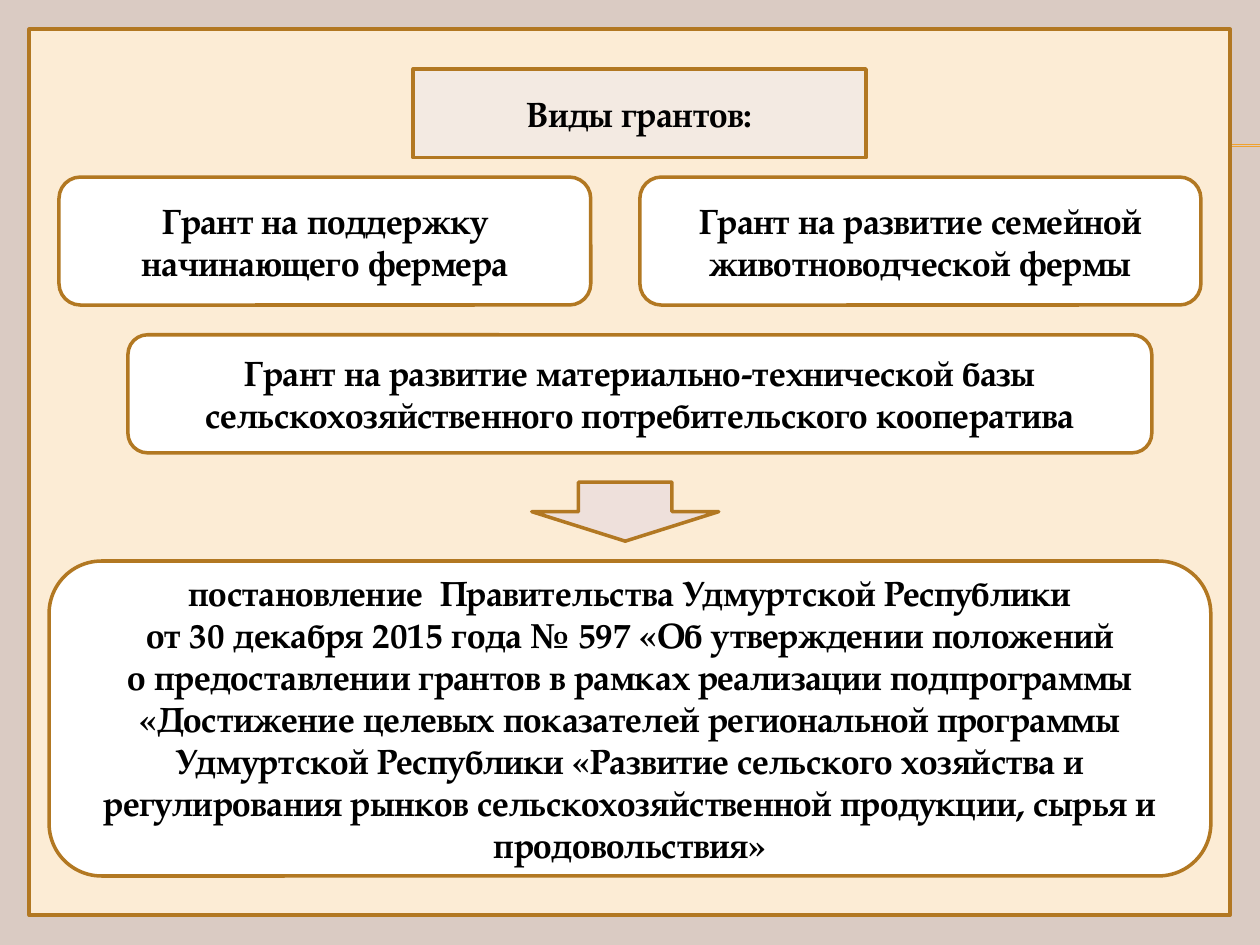
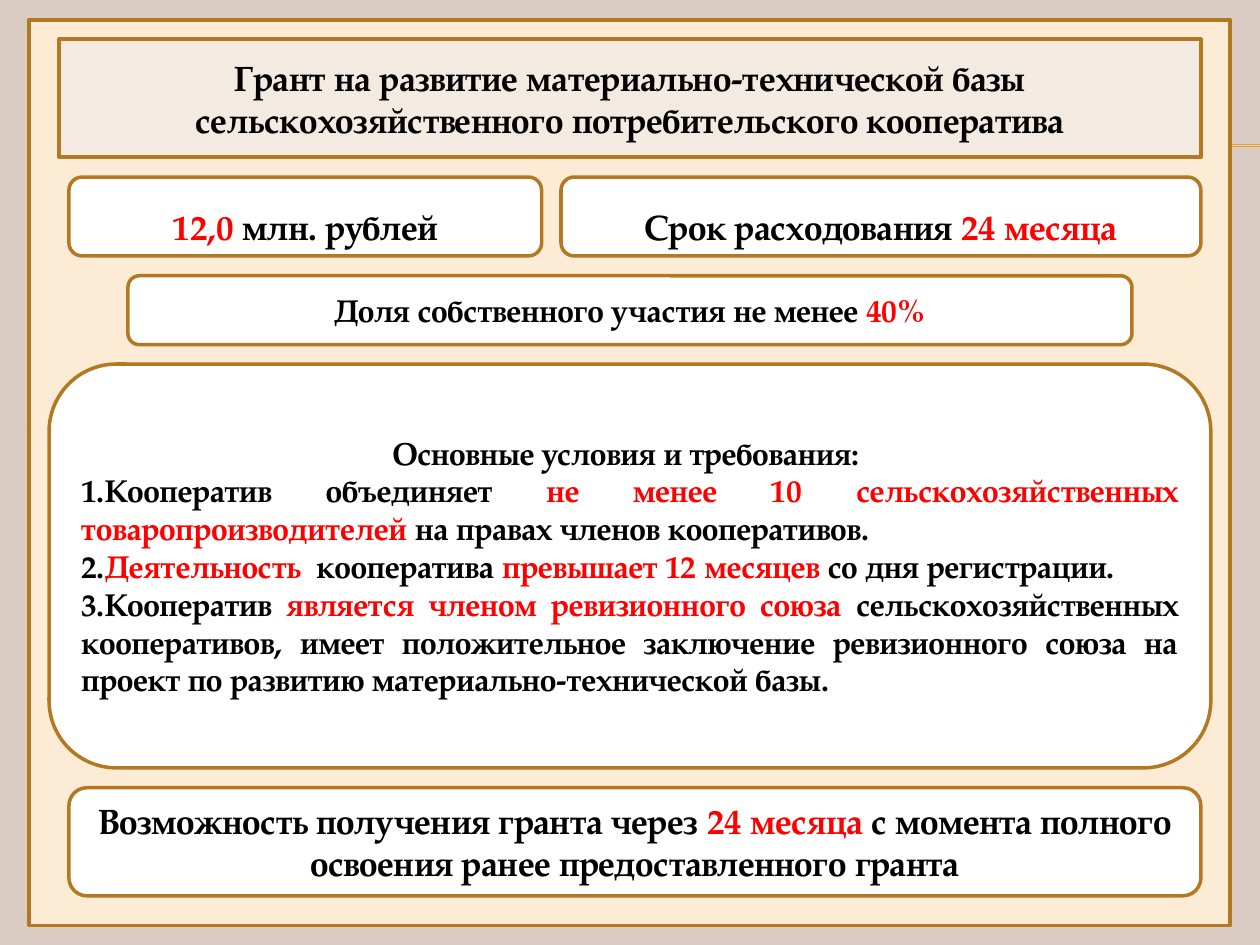
"""Build two slides on farm grants."""
from lxml.etree import SubElement
from pptx import Presentation
from pptx.dml.color import RGBColor as RGB
from pptx.enum.shapes import MSO_CONNECTOR as LINK, MSO_SHAPE as SHAPE
from pptx.enum.text import MSO_ANCHOR as ANCHOR, MSO_AUTO_SIZE as FIT, PP_ALIGN as ALIGN
from pptx.oxml.ns import qn
from pptx.util import Cm, Pt

HUES = {
    "back": "DACBC3", "panel": "FCECD5", "head": "F3EAE2", "card": "FFFFFF",
    "arrow": "EEE0DB", "edge": "B27822", "rule": "F0A22E",
    "ink": "000000", "red": "FF0000",
}
FONT = "TeX Gyre Pagella"
WIDE, HIGH = 25.4, 19.05
COOP = ("Грант на развитие материально-технической базы "
        "сельскохозяйственного потребительского кооператива")


def hue(name):
    """Return a named colour."""
    return RGB.from_string(HUES[name])


class Deck:
    """Hold the style and the current slide."""

    def __init__(self):
        """Start an empty deck with a plain background."""
        self.prs = Presentation()
        self.prs.slide_width, self.prs.slide_height = Cm(WIDE), Cm(HIGH)
        fill = self.prs.slide_master.background.fill
        fill.solid()
        fill.fore_color.rgb = hue("back")

    def page(self, top, high, title, box):
        """Add a slide with its rules, panel and title."""
        self.slide = self.prs.slides.add_slide(self.prs.slide_layouts[5])
        for y in (2.92, 2.95):
            self.rule(y)
        self.shape(SHAPE.RECTANGLE, (0.59, top, 24.21, high), "panel")
        self.title(title, box)

    def rule(self, y):
        """Draw a thin line to the right edge."""
        line = self.slide.shapes.add_connector(
            LINK.STRAIGHT, Cm(1.42), Cm(y), Cm(WIDE), Cm(y))
        line.line.color.rgb = hue("rule")
        line.line.width = Pt(0.75)
        SubElement(line.element.spPr, qn("a:effectLst"))

    def paint(self, shape, fill):
        """Fill and outline a shape."""
        shape.fill.solid()
        shape.fill.fore_color.rgb = hue(fill)
        shape.line.color.rgb = hue("edge")
        shape.line.width = Pt(2)

    def shape(self, kind, box, fill):
        """Add a preset shape in the deck style."""
        shape = self.slide.shapes.add_shape(kind, *map(Cm, box))
        shape.shadow.inherit = False
        self.paint(shape, fill)
        return shape

    def title(self, text, box):
        """Turn the title placeholder into a rounded box above the panel."""
        head = self.slide.shapes.title
        head.left, head.top, head.width, head.height = map(Cm, box)
        geom = SubElement(head.element.spPr, qn("a:prstGeom"), prst="roundRect")
        SubElement(geom, qn("a:avLst"))
        self.paint(head, "head")
        self.slide.shapes.element.append(head.element)
        self.text(head, [text])

    def card(self, box, *lines, size=20, loose=False, list_from=None):
        """Add a white rounded box with text."""
        shape = self.shape(SHAPE.ROUNDED_RECTANGLE, box, "card")
        self.text(shape, lines, size, loose, list_from)

    def text(self, shape, lines, size=20, loose=False, list_from=None):
        """Set paragraphs; the words between asterisks turn red."""
        frame = shape.text_frame
        frame.word_wrap = True
        frame.auto_size = FIT.NONE
        frame.vertical_anchor = ANCHOR.MIDDLE
        for i, line in enumerate(lines):
            para = frame.add_paragraph() if i else frame.paragraphs[0]
            listed = list_from is not None and i >= list_from
            para.alignment = ALIGN.JUSTIFY if listed else ALIGN.CENTER
            if loose:
                para.line_spacing = 1.5
                para.space_before = para.space_after = Pt(3)
            for j, words in enumerate(line.split("*")):
                if words:
                    self.run(para, words, size, "red" if j % 2 else "ink")

    def run(self, para, words, size, ink):
        """Add one bold run."""
        run = para.add_run()
        run.text = words
        run.font.name, run.font.size, run.font.bold = FONT, Pt(size), True
        run.font.color.rgb = hue(ink)


def kinds(deck):
    """Show the kinds of grants and the decree behind them."""
    deck.page(0.59, 17.86, "Виды грантов:", (8.33, 1.39, 9.13, 1.79))
    deck.card((1.19, 3.57, 10.72, 2.58), "Грант на поддержку начинающего фермера")
    deck.card((12.9, 3.57, 11.31, 2.58),
              "Грант на развитие семейной животноводческой фермы")
    deck.card((2.58, 6.75, 20.64, 2.38), COOP)
    deck.card(
        (0.99, 11.31, 23.42, 6.35),
        "постановление  Правительства Удмуртской Республики",
        "от 30 декабря 2015 года № 597 «Об утверждении положений",
        "о предоставлении грантов в рамках реализации подпрограммы "
        "«Достижение целевых показателей региональной программы "
        "Удмуртской Республики «Развитие сельского хозяйства и "
        "регулирования рынков сельскохозяйственной продукции, сырья и "
        "продовольствия»")
    deck.shape(SHAPE.DOWN_ARROW, (10.72, 9.72, 3.77, 1.19), "arrow")


def terms(deck):
    """Show the terms of the cooperative grant."""
    deck.page(0.4, 18.26, COOP, (1.19, 0.79, 23.02, 2.38))
    deck.card(
        (0.99, 7.34, 23.42, 8.14),
        "Основные условия и требования: ",
        "1.Кооператив объединяет *не менее 10 сельскохозяйственных "
        "товаропроизводителей *на правах членов кооперативов.",
        "2.*Деятельность*  кооператива *превышает 12 месяцев *со дня регистрации.",
        "3.Кооператив *является членом ревизионного союза *"
        "сельскохозяйственных кооперативов, имеет положительное заключение "
        "ревизионного союза на проект по развитию материально-технической базы.",
        size=18, list_from=1)
    deck.card((1.39, 3.57, 9.53, 1.59), "*12,0* млн. рублей", loose=True)
    deck.card((2.58, 5.56, 20.24, 1.39),
              "Доля собственного участия не менее *40%*", size=18)
    deck.card((11.31, 3.57, 12.9, 1.59), "Срок расходования *24 месяца*", loose=True)
    deck.card((1.39, 15.88, 22.82, 2.18),
              "Возможность получения гранта через *24 месяца *с момента "
              "полного освоения ранее предоставленного гранта")


def main():
    """Build and save the deck."""
    deck = Deck()
    kinds(deck)
    terms(deck)
    deck.prs.save("out.pptx")


if __name__ == "__main__":
    main()
